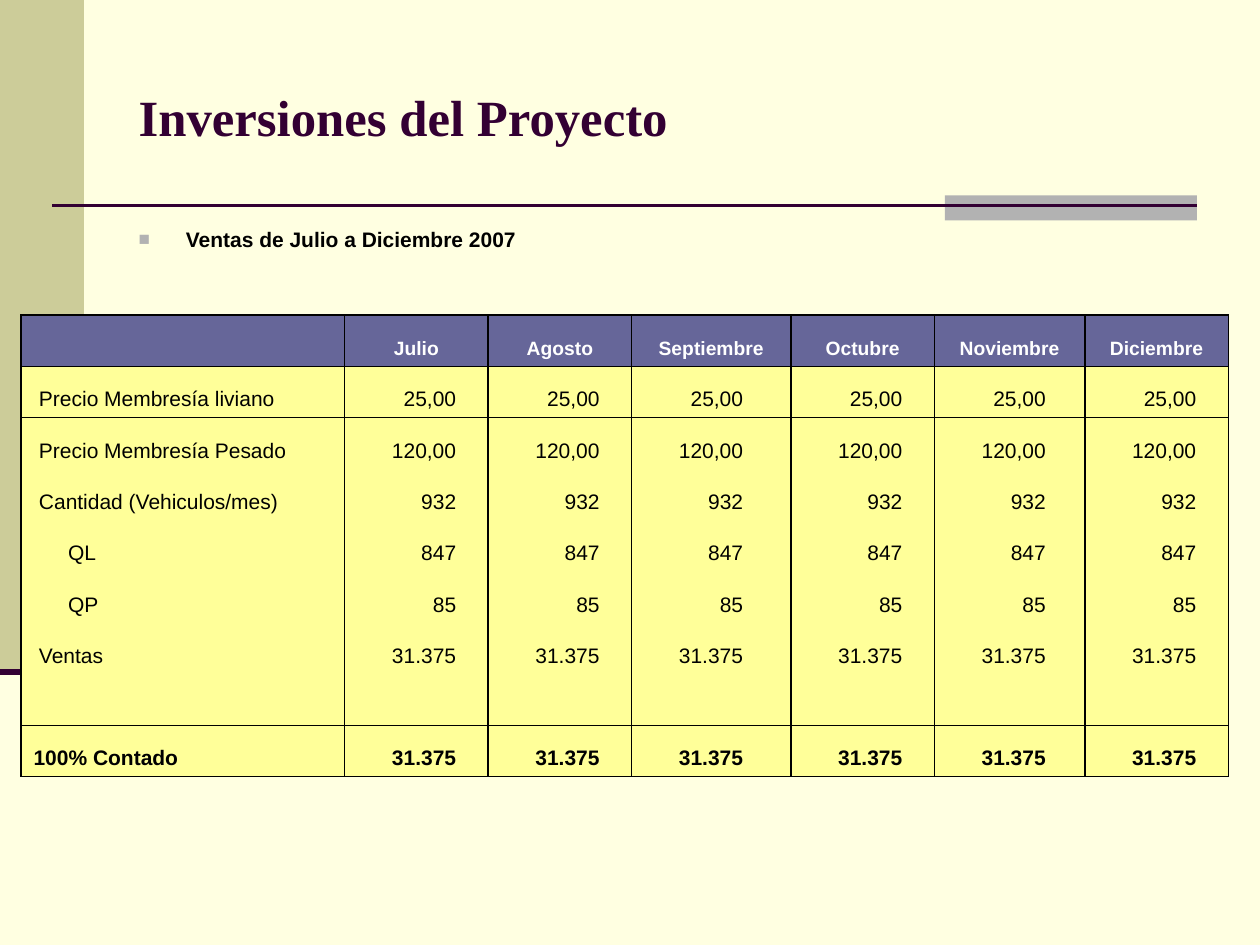
"""Build the slide with the sales table for July to December 2007."""
from lxml.etree import SubElement
from pptx import Presentation
from pptx.dml.color import RGBColor
from pptx.enum.shapes import MSO_CONNECTOR, MSO_SHAPE
from pptx.enum.text import MSO_ANCHOR as Anchor, MSO_AUTO_SIZE as AutoSize, PP_ALIGN as Align
from pptx.oxml.ns import qn
from pptx.util import Pt

INK, PLUM, GRAY = "000000", "330033", "B2B2B2"


def paint(color_format, hex_color):
    """Set a fill's or a font's colour from a hex string."""
    if hasattr(color_format, "solid"):
        color_format.solid()
        color_format = color_format.fore_color
    color_format.rgb = RGBColor.from_string(hex_color)


def write(paragraph, text, size, color, bold=False, font="Arial"):
    """Add one formatted run to a paragraph."""
    run = paragraph.add_run()
    run.text = text
    run.font.name, run.font.size, run.font.bold = font, Pt(size), bold
    paint(run.font.color, color)


deck = Presentation()
deck.slide_width, deck.slide_height = Pt(720), Pt(540)
slide = deck.slides.add_slide(deck.slide_layouts[1])
paint(slide.background.fill, "FFFFE1")

for left, top, width, height, color in [(0, 0, 48, 384, "CCCC99"), (540, 111.6, 144, 14.4, GRAY)]:
    band = slide.shapes.add_shape(MSO_SHAPE.RECTANGLE, Pt(left), Pt(top), Pt(width), Pt(height))
    band.shadow.inherit = False
    band.line.fill.background()
    paint(band.fill, color)

for start, end, y, weight in [(30, 684, 117.6, 1.5), (0, 48, 384, 3.5)]:
    rule = slide.shapes.add_connector(MSO_CONNECTOR.STRAIGHT, Pt(start), Pt(y), Pt(end), Pt(y))
    rule.line.width = Pt(weight)
    paint(rule.line.color, PLUM)
    SubElement(rule.element.spPr, qn("a:effectLst"))

title, body = slide.shapes.title, slide.placeholders[1]
for holder, top, width, height, anchor in [
    (title, 21.6, 612, 90, Anchor.MIDDLE),
    (body, 126, 300, 356.4, Anchor.TOP),
]:
    holder.left, holder.top, holder.width, holder.height = Pt(72), Pt(top), Pt(width), Pt(height)
    holder.text_frame.auto_size = AutoSize.NONE
    holder.text_frame.vertical_anchor = anchor
    holder.text_frame.paragraphs[0].alignment = Align.LEFT

write(title.text_frame.paragraphs[0], "Inversiones del Proyecto", 29, PLUM, True, "Times New Roman")

subtitle = body.text_frame.paragraphs[0]
subtitle.space_before = Pt(2.4)
write(subtitle, "Ventas de Julio a Diciembre 2007", 12, INK, True)
bullet = subtitle._p.get_or_add_pPr()
bullet.set("marL", str(Pt(27)))
bullet.set("indent", str(-Pt(27)))
SubElement(SubElement(bullet, qn("a:buClr")), qn("a:srgbClr"), val=GRAY)
SubElement(bullet, qn("a:buSzPct"), val="90000")
SubElement(bullet, qn("a:buFont"), typeface="Arial")
SubElement(bullet, qn("a:buChar"), char="■")

months = ["Julio", "Agosto", "Septiembre", "Octubre", "Noviembre", "Diciembre"]
monthly_values = [
    ("Precio Membresía liviano", "25,00", 10.3),
    ("Precio Membresía Pesado", "120,00", 10.3),
    ("Cantidad (Vehiculos/mes)", "932", 10.3),
    ("QL", "847", 26.9),
    ("QP", "85", 26.9),
    ("Ventas", "31.375", 10.3),
    ("", "", 7.2),
    ("100% Contado", "31.375", 7.2),
]
column_widths = [185, 82, 82, 91, 82, 86, 82]
rows = [["", *months]] + [[label] + [value] * len(months) for label, value, _ in monthly_values]
label_insets = [7.2] + [inset for _, _, inset in monthly_values]
total_row = len(rows) - 1
number_edge = 63.7

frame = slide.shapes.add_table(len(rows), len(column_widths), Pt(12), Pt(180), Pt(690), Pt(264))
sales = frame.table
sales.first_row = sales.horz_banding = False
sales._tbl.tblPr.find(qn("a:tableStyleId")).text = "{2D5ABB26-0587-4C30-8999-92F81FD0307C}"
for column, width in zip(sales.columns, column_widths):
    column.width = Pt(width)

for r, texts in enumerate(rows):
    sales.rows[r].height = Pt(264 / len(rows))
    for c, text in enumerate(texts):
        cell = sales.cell(r, c)
        cell.vertical_anchor = Anchor.BOTTOM
        edges = ["lnL", "lnR"]
        if r in (0, 1, total_row):
            edges.append("lnT")
        if r in (0, total_row - 1, total_row):
            edges.append("lnB")
        for edge in edges:
            border = SubElement(cell._tc.get_or_add_tcPr(), qn(f"a:{edge}"), w=str(Pt(1)))
            SubElement(SubElement(border, qn("a:solidFill")), qn("a:srgbClr"), val=INK)
        paint(cell.fill, "FFFF99" if r else "666699")
        entry = cell.text_frame.paragraphs[0]
        if r == 0:
            entry.alignment = Align.CENTER
        elif c == 0:
            cell.margin_left = Pt(label_insets[r])
        else:
            entry.alignment = Align.RIGHT
            cell.margin_right = Pt(column_widths[c] - number_edge)
        if text:
            write(entry, text, 12 if r else 11, INK if r else "FFFFFF", r in (0, total_row))

deck.save("out.pptx")
